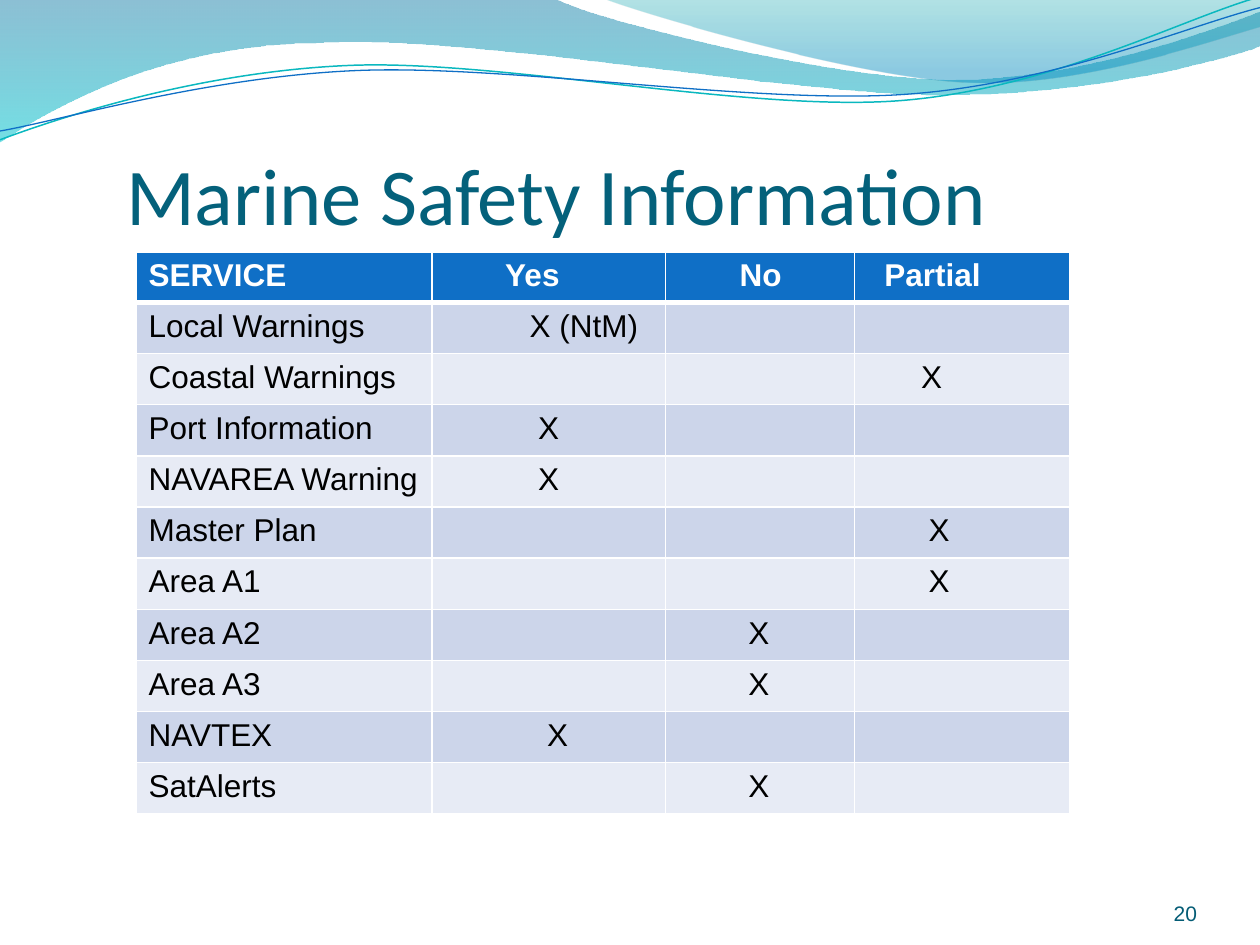
import math

from lxml import etree
from pptx import Presentation
from pptx.dml.color import RGBColor
from pptx.enum.text import MSO_ANCHOR, PP_ALIGN
from pptx.oxml.ns import qn
from pptx.util import Inches, Pt

LEFT, CENTER, RIGHT = PP_ALIGN.LEFT, PP_ALIGN.CENTER, PP_ALIGN.RIGHT
BOTTOM = MSO_ANCHOR.BOTTOM

WHITE = RGBColor(0xFF, 0xFF, 0xFF)
BLACK = RGBColor(0x00, 0x00, 0x00)
BLUE = RGBColor(0x0F, 0x6F, 0xC6)
TEAL = RGBColor(0x0A, 0xB8, 0xBF)
TITLE_TEAL = RGBColor(0x04, 0x61, 0x7B)
NUMBER_TEAL = RGBColor(0x04, 0x5C, 0x75)
BAND_DARK = RGBColor(0xCC, 0xD5, 0xEA)
BAND_LIGHT = RGBColor(0xE7, 0xEB, 0xF5)
WAVE_TOP = RGBColor(0x00, 0x74, 0xA1)
WAVE_BOTTOM = RGBColor(0x00, 0xC6, 0xCF)
CREST_TOP = RGBColor(0x00, 0xA1, 0xA9)
CREST_BOTTOM = RGBColor(0x00, 0x8B, 0xBF)

WAVE = [(0, -0.01), (4.4, -0.01), (4.76, 0.17, 6.64, 0.63, 7.58, 0.63),
        (8.53, 0.63, 9.58, 0.26, 10, 0.09), (10.01, 0.36),
        (9.83, 0.44, 8.7, 0.76, 7.46, 0.75), (6.22, 0.75, 3.82, 0.28, 2.57, 0.34),
        (1.29, 0.35, 0.46, 0.83, -0.01, 1.13), (0, -0.01)]
CREST = [(4.79, -0.01), (5.09, 0.11, 6.82, 0.62, 7.69, 0.65),
         (8.56, 0.69, 9.61, 0.32, 10, 0.21), (10, 0), (4.79, -0.01)]
TEAL_CURVE = [(0, 1.11), (0.48, 0.93, 1.58, 0.57, 2.77, 0.52),
              (3.95, 0.47, 5.93, 0.89, 7.13, 0.8), (8.33, 0.71, 9.38, 0.15, 9.98, -0.02)]
BLUE_CURVE = [(0, 1.04), (0.47, 0.96, 1.64, 0.61, 2.83, 0.56),
              (4.03, 0.51, 5.97, 0.83, 7.17, 0.75), (8.36, 0.67, 9.41, 0.21, 10, 0.06)]
TILT = -2.7

COL_WIDTHS = [2.35, 1.85, 1.5, 1.71]
HEADER_HEIGHT = 0.4
HEADERS = [("SERVICE", 0.1), ("Yes", 0.58), ("No", 0.59), ("Partial", 0.24)]
SERVICES = [("Local Warnings", 1, "X (NtM)", CENTER, 0.66),
            ("Coastal Warnings", 3, "X", LEFT, 0.53),
            ("Port Information", 1, "X", CENTER, 0.1),
            ("NAVAREA Warning", 1, "X", CENTER, 0.1),
            ("Master Plan", 3, "X", LEFT, 0.59),
            ("Area A1", 3, "X", LEFT, 0.59),
            ("Area A2", 2, "X", LEFT, 0.66),
            ("Area A3", 2, "X", LEFT, 0.66),
            ("NAVTEX", 1, "X", CENTER, 0.24),
            ("SatAlerts", 2, "X", LEFT, 0.66)]


def turn(x, y, degrees, center):
    dx, dy = x - center[0], y - center[1]
    cos, sin = math.cos(math.radians(degrees)), math.sin(math.radians(degrees))
    return center[0] + dx * cos - dy * sin, center[1] + dx * sin + dy * cos


class SlideBuilder:
    body_font = "Arial"
    title_font = "Calibri"

    def __init__(self, slide):
        self.slide = slide

    def format_text(self, tf, size, color, font=body_font, bold=False, align=LEFT):
        for p in tf.paragraphs:
            p.alignment = align
            for r in p.runs:
                r.font.name, r.font.size, r.font.bold = font, Pt(size), bold
                r.font.color.rgb = color

    def set_frame(self, tf, top=0):
        tf.word_wrap = True
        tf.vertical_anchor = BOTTOM
        tf.margin_left = tf.margin_right = 0
        tf.margin_top, tf.margin_bottom = Inches(top), 0

    def outline(self, segments, box, rotation=0, close=False):
        left, top, width, height = box
        center = left + width / 2, top + height / 2
        fb = self.slide.shapes.build_freeform(Inches(left), Inches(top))
        fb.add_line_segments([(Inches(left + width), Inches(top + height))], close=False)
        sp = fb.convert_to_shape()
        sp.shadow.inherit = False
        sp.rotation = rotation
        path = next(sp._element.iter(qn("a:path")))
        for child in list(path):
            path.remove(child)
        for i, seg in enumerate(segments):
            name = "a:cubicBezTo" if len(seg) == 6 else "a:lnTo" if i else "a:moveTo"
            command = etree.SubElement(path, qn(name))
            for x, y in zip(seg[::2], seg[1::2]):
                x, y = turn(x, y, -rotation, center)
                etree.SubElement(command, qn("a:pt"), x=str(Inches(x - left)),
                                 y=str(Inches(y - top)))
        if close:
            etree.SubElement(path, qn("a:close"))
        return sp

    def wave(self, segments, box, stops):
        sp = self.outline(segments, box, close=True)
        sp.line.fill.background()
        sp.fill.gradient()
        sp.fill.gradient_angle = 270
        for stop, (position, color, _) in zip(sp.fill.gradient_stops, stops):
            stop.position = position
            stop.color.rgb = color
        for clr, (_, _, opacity) in zip(sp._element.spPr.iter(qn("a:srgbClr")), stops):
            etree.SubElement(clr, qn("a:alpha"), val=str(opacity * 1000))

    def curve(self, segments, box, color, width):
        sp = self.outline(segments, box, TILT)
        sp.fill.background()
        sp.line.color.rgb = color
        sp.line.width = Pt(width)

    def title(self, text, left, top, width, height):
        sp = self.slide.shapes.title
        self.slide.shapes._spTree.append(sp._element)
        sp.left, sp.top, sp.width, sp.height = map(Inches, (left, top, width, height))
        sp.text_frame.text = text
        self.set_frame(sp.text_frame, 0.05)
        self.format_text(sp.text_frame, 46, TITLE_TEAL, self.title_font)

    def number(self, text, left, top, width, height):
        sp = self.slide.shapes.add_textbox(*map(Inches, (left, top, width, height)))
        sp.text_frame.text = text
        self.set_frame(sp.text_frame)
        self.format_text(sp.text_frame, 12, NUMBER_TEAL, align=RIGHT)

    def borders(self, cell, bottom):
        tcPr = cell._tc.get_or_add_tcPr()
        for i, (side, width) in enumerate([("L", 1), ("R", 1), ("T", 1), ("B", bottom)]):
            ln = etree.Element(qn(f"a:ln{side}"), w=str(Pt(width)))
            fill = etree.SubElement(ln, qn("a:solidFill"))
            etree.SubElement(fill, qn("a:srgbClr"), val=str(WHITE))
            tcPr.insert(i, ln)

    def cell_text(self, cell, text, color, bold=False, align=LEFT, inset=0.1):
        cell.text = text
        cell.margin_left = Inches(inset)
        self.format_text(cell.text_frame, 18, color, bold=bold, align=align)

    def table(self, left, top, width, height):
        rows = len(SERVICES) + 1
        table = self.slide.shapes.add_table(
            rows, len(COL_WIDTHS), *map(Inches, (left, top, width, height))).table
        for col, col_width in zip(table.columns, COL_WIDTHS):
            col.width = Inches(col_width)
        row_height = (height - HEADER_HEIGHT) / len(SERVICES)
        for i, row in enumerate(table.rows):
            row.height = Inches(row_height if i else HEADER_HEIGHT)
            band = BAND_DARK if i % 2 else BAND_LIGHT
            for cell in row.cells:
                cell.fill.solid()
                cell.fill.fore_color.rgb = band if i else BLUE
                self.borders(cell, 1 if i else 3)
        for col, (text, inset) in enumerate(HEADERS):
            self.cell_text(table.cell(0, col), text, WHITE, bold=True, inset=inset)
        for i, (service, col, mark, align, inset) in enumerate(SERVICES, 1):
            self.cell_text(table.cell(i, 0), service, BLACK)
            self.cell_text(table.cell(i, col), mark, BLACK, align=align, inset=inset)


def main():
    prs = Presentation()
    prs.slide_width, prs.slide_height = Inches(10), Inches(7.5)
    s = SlideBuilder(prs.slides.add_slide(prs.slide_layouts[5]))
    s.wave(WAVE, (-0.01, -0.01, 10.02, 1.14), [(0, WAVE_TOP, 45), (1, WAVE_BOTTOM, 55)])
    s.wave(CREST, (4.79, -0.01, 5.21, 0.7), [(0, CREST_TOP, 30), (0.8, CREST_BOTTOM, 45)])
    s.curve(TEAL_CURVE, (-0.02, 0.22, 10.02, 0.71), TEAL, 0.85)
    s.curve(BLUE_CURVE, (-0.02, 0.3, 10.03, 0.58), BLUE, 0.75)
    s.title("Marine Safety Information", 1, 0.67, 7.83, 1.25)
    s.table(1.08, 2, 7.42, 4.46)
    s.number("20", 8.67, 6.95, 0.83, 0.4)
    prs.save("out.pptx")


if __name__ == "__main__":
    main()
